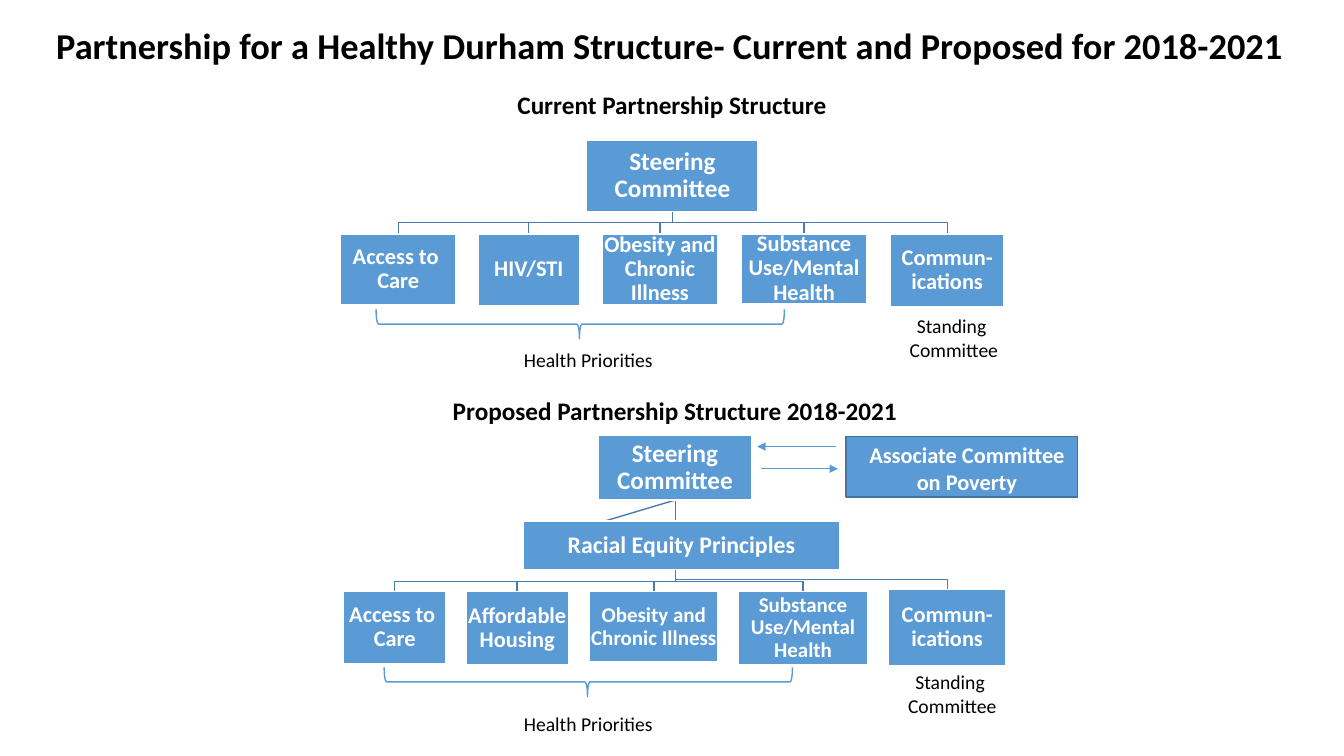
import pptx
import pptx.util
import pptx.dml.color
import pptx.enum.shapes
import pptx.enum.text
import pptx.oxml
import pptx.oxml.ns
from pptx.util import Inches

COLORS = {
    "box": "5B9BD5",
    "branch": "497CAB",
    "outline": "43739E",
    "light": "FFFFFF",
    "dark": "000000",
}
SHAPES = pptx.enum.shapes.MSO_SHAPE
ANCHORS = pptx.enum.text.MSO_ANCHOR


def write_text(shape, text, size, color, bold=True, anchor=ANCHORS.TOP, spacing=None):
    frame = shape.text_frame
    frame.text = text
    frame.word_wrap = True
    frame.auto_size = pptx.enum.text.MSO_AUTO_SIZE.NONE
    frame.vertical_anchor = anchor
    paragraph = frame.paragraphs[0]
    paragraph.alignment = pptx.enum.text.PP_ALIGN.CENTER
    if spacing:
        paragraph.line_spacing = spacing
    for run in paragraph.runs:
        run.font.name = "Calibri"
        run.font.size = pptx.util.Pt(size)
        run.font.bold = bold
        run.font.color.rgb = pptx.dml.color.RGBColor.from_string(COLORS[color])


def paint(shape, line, fill=None):
    shape.shadow.inherit = False
    shape.line.color.rgb = pptx.dml.color.RGBColor.from_string(COLORS[line])
    shape.line.width = pptx.util.Pt(1)
    if fill:
        shape.fill.solid()
        shape.fill.fore_color.rgb = pptx.dml.color.RGBColor.from_string(COLORS[fill])
    else:
        shape.fill.background()


deck = pptx.Presentation()
deck.slide_width = Inches(13.33)
deck.slide_height = Inches(7.5)
slide = deck.slides.add_slide(deck.slide_layouts[5])

title = slide.shapes.title
title.left, title.top, title.width, title.height = map(Inches, (0.13, 0.18, 13.04, 0.54))
write_text(title, "Partnership for a Healthy Durham Structure- Current and Proposed for 2018-2021", 26, "dark")

structures = [
    {
        "trunk": (6.67, 2.1),
        "drop": 0.11,
        "lead": ("Steering Committee", 18, 5.82, 1.39, 1.7, 0.71),
        "committees": [
            ("Access to \vCare", 16, 3.38, 2.32, 1.14, 0.7),
            ("HIV/STI", 16, 4.74, 2.32, 1.01, 0.71),
            ("Obesity and Chronic Illness", 16, 5.97, 2.32, 1.15, 0.7),
            ("Substance Use/Mental Health", 16, 7.35, 2.32, 1.25, 0.69),
            ("Commun-ications", 16, 8.83, 2.32, 1.13, 0.72),
        ],
        "principles": [],
        "brace": (5.61, 1.19),
    },
    {
        "trunk": (6.7, 4.96),
        "drop": 0.1,
        "lead": ("Steering Committee", 18, 5.93, 4.32, 1.53, 0.64),
        "committees": [
            ("Access to \vCare", 16, 3.41, 5.87, 1.01, 0.71),
            ("Affordable Housing", 16, 4.62, 5.87, 1.02, 0.72),
            ("Obesity and Chronic Illness", 15, 5.85, 5.87, 1.27, 0.7),
            ("Substance Use/Mental Health", 15, 7.32, 5.87, 1.29, 0.72),
            ("Commun-ications", 16, 8.81, 5.85, 1.17, 0.75),
        ],
        "principles": [("Racial Equity Principles", 17, 5.19, 5.17, 3.14, 0.48)],
        "brace": (5.69, 4.74),
    },
]

for structure in structures:
    trunk_x, trunk_y = structure["trunk"]
    routes = [[(left, top + height / 2)] for _, _, left, top, _, height in structure["principles"]]
    for _, _, left, top, width, _ in structure["committees"]:
        center, bus = left + width / 2, top - structure["drop"]
        routes.append([(trunk_x, bus), (center, bus), (center, top)])
    for route in routes:
        builder = slide.shapes.build_freeform(Inches(trunk_x), Inches(trunk_y))
        builder.add_line_segments([(Inches(x), Inches(y)) for x, y in route], close=False)
        paint(builder.convert_to_shape(), "branch")

    for label, size, *bounds in [structure["lead"], *structure["committees"], *structure["principles"]]:
        committee = slide.shapes.add_shape(SHAPES.RECTANGLE, *map(Inches, bounds))
        paint(committee, "light", "box")
        frame = committee.text_frame
        frame.margin_left = frame.margin_right = frame.margin_top = frame.margin_bottom = Inches(0.01)
        write_text(committee, label, size, "light", anchor=ANCHORS.MIDDLE, spacing=0.9)

    brace = slide.shapes.add_shape(SHAPES.LEFT_BRACE, *map(Inches, (*structure["brace"], 0.29, 4.05)))
    brace.rotation = 270
    brace.adjustments[0] = 0.083
    brace.adjustments[1] = 0.498
    paint(brace, "box")

captions = [
    ("Current Partnership Structure", 18, True, -0.03, 0.84, 13.39, 0.4),
    ("Proposed Partnership Structure 2018-2021", 18, True, 0.03, 3.87, 13.33, 0.4),
    ("Health Priorities", 14, False, 3.81, 3.4, 4.05, 0.34),
    ("Health Priorities", 14, False, 3.81, 7.01, 4.05, 0.34),
    ("Standing \vCommittee", 14, False, 7.42, 3.07, 4.08, 0.57),
    ("Standing \vCommittee", 14, False, 7.42, 6.6, 4.05, 0.57),
]
for wording, size, bold, *bounds in captions:
    caption = slide.shapes.add_textbox(*map(Inches, bounds))
    write_text(caption, wording, size, "dark", bold)

associate = slide.shapes.add_shape(SHAPES.RECTANGLE, Inches(8.39), Inches(4.33), Inches(2.3), Inches(0.6))
paint(associate, "outline", "box")
associate.text_frame.margin_left = Inches(0.2)
write_text(associate, "Associate Committee on Poverty", 16, "light")

for start, end, y in [(8.29, 7.51, 4.43), (7.55, 8.31, 4.65)]:
    exchange = slide.shapes.add_connector(
        pptx.enum.shapes.MSO_CONNECTOR.STRAIGHT, Inches(start), Inches(y), Inches(end), Inches(y)
    )
    exchange.line.color.rgb = pptx.dml.color.RGBColor.from_string(COLORS["box"])
    exchange.line.width = pptx.util.Pt(0.5)
    arrowhead = pptx.oxml.parse_xml(f'<a:tailEnd {pptx.oxml.ns.nsdecls("a")} type="triangle"/>')
    exchange.line._get_or_add_ln().append(arrowhead)
    no_shadow = pptx.oxml.parse_xml(f'<a:effectLst {pptx.oxml.ns.nsdecls("a")}/>')
    exchange._element.spPr.append(no_shadow)

deck.save("out.pptx")
